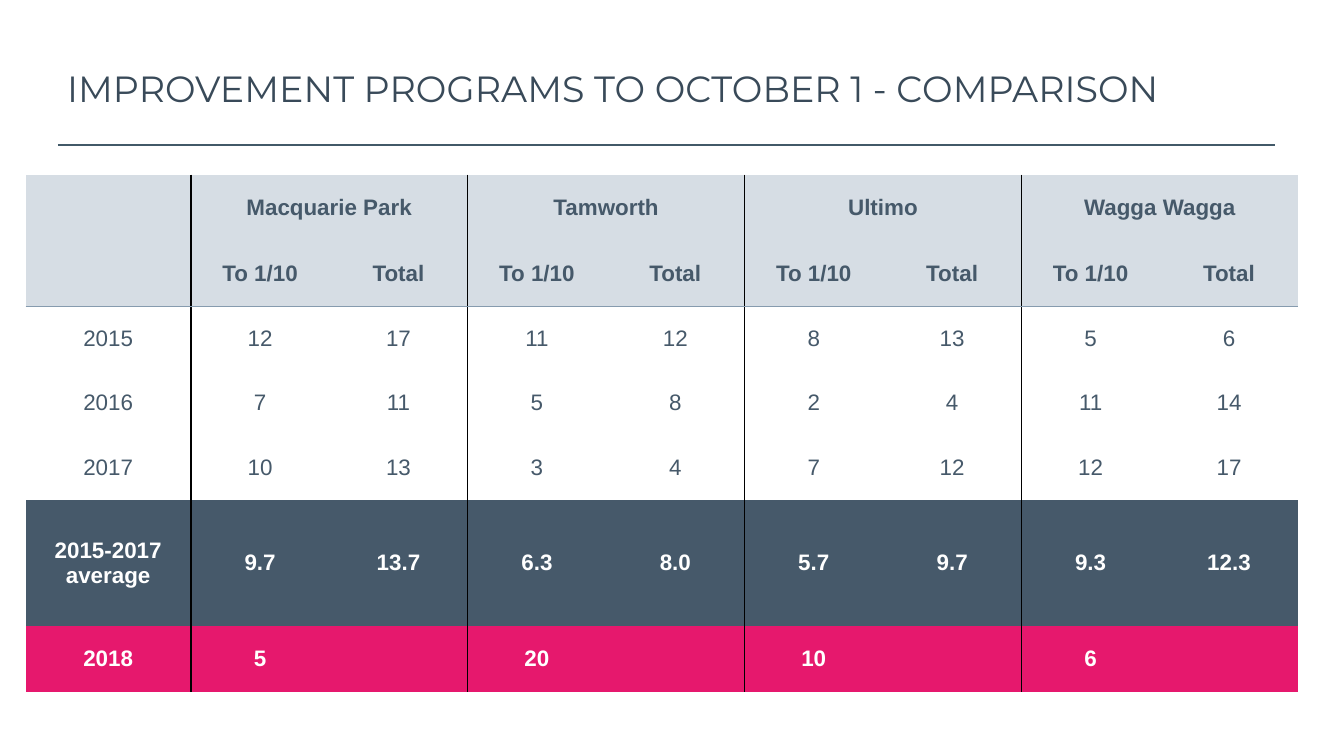
from lxml.etree import SubElement as Sub
from pptx import Presentation
from pptx.dml.color import RGBColor as RGB
from pptx.enum.shapes import MSO_CONNECTOR as Link
from pptx.enum.text import MSO_ANCHOR as Anchor, PP_ALIGN as Align
from pptx.oxml.ns import qn
from pptx.util import Inches, Pt

COLORS = {
    "title": "394A59", "rule": "425968", "text": "46596A", "head": "D6DDE4",
    "dark": "46596A", "pink": "E6186D", "white": "FFFFFF",
    "grid": "000000", "edge": "869BAE",
}
SITES = ["Macquarie Park", "Tamworth", "Ultimo", "Wagga Wagga"]
ROWS = [
    [""] + [part for site in SITES for part in (site, "")],
    [""] + ["To 1/10", "Total"] * len(SITES),
    ["2015", "12", "17", "11", "12", "8", "13", "5", "6"],
    ["2016", "7", "11", "5", "8", "2", "4", "11", "14"],
    ["2017", "10", "13", "3", "4", "7", "12", "12", "17"],
    ["2015-2017 average", "9.7", "13.7", "6.3", "8.0", "5.7", "9.7", "9.3", "12.3"],
    ["2018", "5", "", "20", "", "10", "", "6", ""],
]
HEAD = ("head", "text", True)
BODY = ("white", "text", False)
# Fill, text colour and bold for each row
LOOKS = [HEAD] * 2 + [BODY] * 3 + [("dark", "white", True), ("pink", "white", True)]
WIDTHS = [1.23] + [1.03] * 8
HEIGHTS = [0.49, 0.49, 0.48, 0.48, 0.48, 0.94, 0.49]


class Deck:
    def __init__(self):
        self.show = Presentation()
        self.show.slide_width = Inches(10)
        self.show.slide_height = Inches(10 * 9 / 16)
        self.slide = self.show.slides.add_slide(self.show.slide_layouts[6])

    def color(self, name):
        return RGB.from_string(COLORS[name])

    def style(self, para, face, size, color, bold=False):
        for run in para.runs:
            run.font.name, run.font.size, run.font.bold = face, Pt(size), bold
            run.font.color.rgb = self.color(color)

    def title(self, text, left, top, width, height):
        box = self.slide.shapes.add_textbox(*map(Inches, (left, top, width, height)))
        frame = box.text_frame
        frame.word_wrap = True
        frame.vertical_anchor = Anchor.MIDDLE
        frame.margin_left = 0
        frame.text = text
        self.style(frame.paragraphs[0], "Montserrat", 19.5, "title")

    def rule(self, left, right, y):
        line = self.slide.shapes.add_connector(
            Link.STRAIGHT, Inches(left), Inches(y), Inches(right), Inches(y))
        line.line.color.rgb = self.color("rule")
        line.line.width = Pt(1)
        Sub(line._element.spPr, qn("a:effectLst"))

    def border(self, cell, sides):
        """Draw the sides that name a colour and clear the others."""
        props = cell._tc.get_or_add_tcPr()
        for side in "LRTB":
            line = Sub(props, qn("a:ln" + side), w=str(Pt(1)))
            if side in sides:
                fill = Sub(line, qn("a:solidFill"))
                Sub(fill, qn("a:srgbClr"), val=COLORS[sides[side]])
            else:
                Sub(line, qn("a:noFill"))

    def cell(self, cell, text, look, sides):
        fill, color, bold = look
        self.border(cell, sides)
        cell.fill.solid()
        cell.fill.fore_color.rgb = self.color(fill)
        cell.vertical_anchor = Anchor.MIDDLE
        cell.margin_left = cell.margin_right = Inches(0.04)
        cell.margin_top = cell.margin_bottom = 0
        cell.text_frame.text = text
        para = cell.text_frame.paragraphs[0]
        para.alignment = Align.CENTER
        self.style(para, "Arial", 12, color, bold)

    def table(self, left, top):
        grid = self.slide.shapes.add_table(
            len(ROWS), len(WIDTHS), Inches(left), Inches(top),
            Inches(sum(WIDTHS)), Inches(sum(HEIGHTS))).table
        grid.first_row = grid.horz_banding = False
        for col, width in zip(grid.columns, WIDTHS):
            col.width = Inches(width)
        for row, height in zip(grid.rows, HEIGHTS):
            row.height = Inches(height)
        for r, (row, look) in enumerate(zip(ROWS, LOOKS)):
            for c, text in enumerate(row):
                sides = {}
                if c % 2:
                    sides["L"] = "grid"
                elif c < len(row) - 1:
                    sides["R"] = "grid"
                if r == 1:
                    sides["B"] = "edge"
                elif r == 2:
                    sides["T"] = "edge"
                if r == 0 and 0 < c < len(row) - 2:
                    sides["R"] = "grid"
                self.cell(grid.cell(r, c), text, look, sides)
        for c in range(1, len(WIDTHS), 2):
            grid.cell(0, c).merge(grid.cell(0, c + 1))


def main():
    deck = Deck()
    deck.rule(0.43, 9.49, 1.08)
    deck.title("IMPROVEMENT PROGRAMS TO OCTOBER 1 - COMPARISON", 0.5, 0.36, 9.5, 0.59)
    deck.table(0.19, 1.3)
    deck.show.save("out.pptx")


if __name__ == "__main__":
    main()
